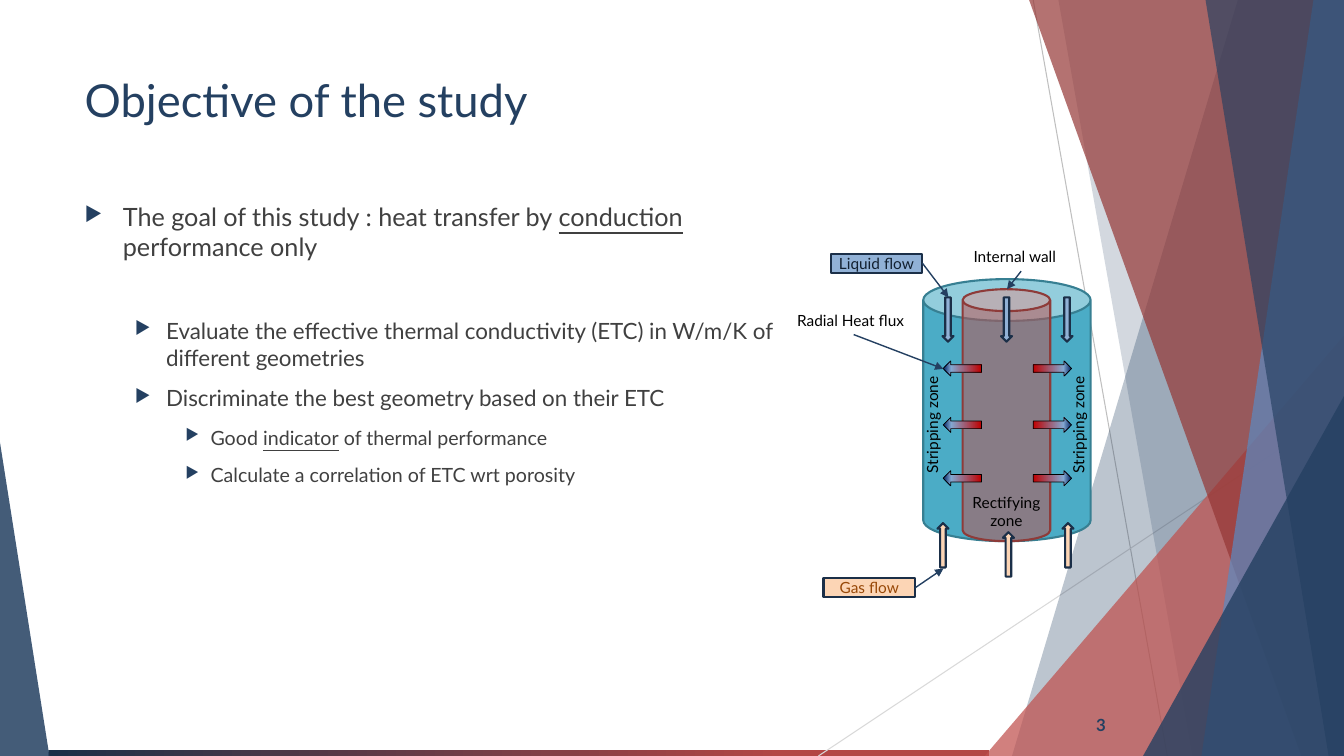
from lxml.etree import SubElement
from pptx import Presentation
from pptx.dml.color import RGBColor
from pptx.enum.shapes import MSO_CONNECTOR, MSO_SHAPE
from pptx.enum.text import MSO_ANCHOR, MSO_AUTO_SIZE, PP_ALIGN
from pptx.oxml.ns import qn
from pptx.util import Pt

WIDE, HIGH = 960, 540
NAVY = RGBColor(0x24, 0x40, 0x61)
DEEP = RGBColor(0x1B, 0x30, 0x49)
EDGE = RGBColor(0x1B, 0x2F, 0x48)
RED = RGBColor(0xC0, 0x50, 0x4D)
BRICK = RGBColor(0xB3, 0x46, 0x44)
RUST = RGBColor(0x95, 0x37, 0x35)
WINE = RGBColor(0x8E, 0x3B, 0x39)
BLUE = RGBColor(0x5A, 0x8A, 0xC2)
SKY = RGBColor(0x91, 0xB1, 0xD6)
PEACH = RGBColor(0xFC, 0xD5, 0xB5)
AQUA = RGBColor(0x4B, 0xAC, 0xC6)
TEAL = RGBColor(0x37, 0x7F, 0x92)
COLD = RGBColor(0x00, 0x20, 0x60)
MILD = RGBColor(0x83, 0xA7, 0xD1)
HOT = RGBColor(0xC0, 0x00, 0x00)
INK = RGBColor(0x12, 0x20, 0x30)
BROWN = RGBColor(0x98, 0x48, 0x07)
GREY = RGBColor(0x40, 0x40, 0x40)
MIST = RGBColor(0xBF, 0xBF, 0xBF)
PALE = RGBColor(0xD9, 0xD9, 0xD9)
BLACK = RGBColor(0, 0, 0)


class Deck:
    FACE = "Lato"
    # Left margin and hanging indent of each bullet level, text size
    LEVELS = [(27.4, 27.4, 18), (58.3, 22.3, 16), (90, 18, 14)]

    def __init__(self, slide):
        self.slide = slide
        self.shapes = slide.shapes

    def style(self, font, size, color, bold=False):
        font.name, font.size, font.bold = self.FACE, Pt(size), bold
        font.color.rgb = color

    def paint(self, shape, fill, alpha=100, line=None, width=1.5):
        shape.shadow.inherit = False
        shape.fill.solid()
        shape.fill.fore_color.rgb = fill
        if alpha < 100:
            tint = shape.element.spPr.find(qn("a:solidFill"))[0]
            SubElement(tint, qn("a:alpha"), val=str(alpha * 1000))
        if line is None:
            shape.line.fill.background()
        else:
            shape.line.color.rgb = line
            shape.line.width = Pt(width)
        return shape

    def form(self, kind, box, fill, alpha=100, line=None, width=1.5, flip=None):
        shape = self.shapes.add_shape(kind, *map(Pt, box))
        if flip:
            shape.element.spPr.xfrm.set(flip, "1")
        return self.paint(shape, fill, alpha, line, width)

    def blend(self, shape, stops, angle):
        shape.fill.gradient()
        shape.fill.gradient_angle = angle
        items = shape.element.spPr.find(qn("a:gradFill")).find(qn("a:gsLst"))
        for item in list(items):
            items.remove(item)
        for place, color in stops:
            stop = SubElement(items, qn("a:gs"), pos=str(place * 1000))
            SubElement(stop, qn("a:srgbClr"), val=str(color))

    def wedge(self, box, tip, fill, alpha):
        shape = self.form(MSO_SHAPE.ISOSCELES_TRIANGLE, box, fill, alpha)
        shape.adjustments[0] = tip

    def wing(self, top, foot, fill, alpha):
        shape = self.shapes.build_freeform(Pt(top), 0, scale=1.0)
        rest = [(WIDE, 0), (WIDE, HIGH), (foot, HIGH)]
        shape.add_line_segments([(Pt(x), Pt(y)) for x, y in rest], close=True)
        self.paint(shape.convert_to_shape(), fill, alpha)

    def link(self, ends, color=NAVY, width=1, head=True):
        line = self.shapes.add_connector(MSO_CONNECTOR.STRAIGHT, *map(Pt, ends))
        line.line.color.rgb = color
        line.line.width = Pt(width)
        props = line.element.spPr
        if head:
            SubElement(props.find(qn("a:ln")), qn("a:tailEnd"), type="triangle")
        SubElement(props, qn("a:effectLst"))

    def words(self, shape, text, size, color, align, bold=False):
        shape.text_frame.text = text
        shape.text_frame.word_wrap = True
        para = shape.text_frame.paragraphs[0]
        para.alignment = align
        self.style(para.runs[0].font, size, color, bold)

    def note(self, box, text, align=PP_ALIGN.CENTER, turn=0):
        shape = self.shapes.add_textbox(*map(Pt, box))
        shape.rotation = turn
        self.words(shape, text, 11, BLACK, align)

    def label(self, box, text, fill, color):
        shape = self.form(MSO_SHAPE.RECTANGLE, box, fill, line=EDGE)
        frame = shape.text_frame
        frame.margin_left = frame.margin_right = 0
        frame.margin_top = frame.margin_bottom = 0
        frame.vertical_anchor = MSO_ANCHOR.MIDDLE
        self.words(shape, text, 11, color, PP_ALIGN.CENTER)

    def title(self, box, text):
        shape = self.shapes.title
        shape.left, shape.top, shape.width, shape.height = map(Pt, box)
        self.words(shape, text, 32.4, NAVY, PP_ALIGN.LEFT)
        shape.text_frame.vertical_anchor = MSO_ANCHOR.TOP
        shape.text_frame.auto_size = MSO_AUTO_SIZE.NONE

    def bullets(self, box, items):
        """Words between underscores are underlined."""
        frame = self.shapes.add_textbox(*map(Pt, box)).text_frame
        frame.word_wrap = True
        for i, (level, gap, text) in enumerate(items):
            para = frame.add_paragraph() if i else frame.paragraphs[0]
            left, hang, size = self.LEVELS[level]
            para.level = level
            para.space_before = Pt(gap)
            props = para._p.get_or_add_pPr()
            props.set("marL", str(Pt(left)))
            props.set("indent", str(-Pt(hang)))
            tint = SubElement(props, qn("a:buClr"))
            SubElement(tint, qn("a:srgbClr"), val=str(NAVY))
            SubElement(props, qn("a:buSzPct"), val="80000")
            SubElement(props, qn("a:buChar"), char="▶")
            for j, part in enumerate(text.split("_")):
                run = para.add_run()
                run.text = part
                self.style(run.font, size, GREY)
                run.font.underline = j % 2 == 1

    def number(self, box, text):
        shape = self.shapes.add_textbox(*map(Pt, box))
        shape.text_frame.vertical_anchor = MSO_ANCHOR.MIDDLE
        self.words(shape, text, 12, NAVY, PP_ALIGN.RIGHT, bold=True)


def main():
    show = Presentation()
    show.slide_width, show.slide_height = Pt(WIDE), Pt(HIGH)
    deck = Deck(show.slides.add_slide(show.slide_layouts[5]))

    # Backdrop
    bar = deck.form(MSO_SHAPE.RECTANGLE, (34.6, 535.7, 671.8, 4.3), DEEP)
    deck.blend(bar, [(0, DEEP), (78, BRICK)], 0)
    deck.link((738, 0, 833.8, HIGH), MIST, 0.75, head=False)
    deck.link((WIDE, 290.2, 584.6, HIGH), PALE, 0.75, head=False)
    deck.wing(884.2, 722.9, NAVY, 30)
    deck.wing(756, 851.8, NAVY, 20)
    deck.wedge((703.4, 239.8, 256.6, 300.2), 1, RED, 72)
    deck.wing(735.1, 929.5, RUST, 70)
    deck.wing(938.2, 858.2, BLUE, 70)
    deck.wing(861.1, 949, NAVY, 65)
    deck.wedge((816.5, 283, 143.5, 257), 1, NAVY, 80)
    deck.wedge((0, 316.1, 35.3, 223.9), 0, NAVY, 85)

    # Title and text
    deck.title((53.3, 48.2, 676.8, 50.4), "Objective of the study")
    deck.bullets((53.3, 140.4, 511.9, 363), [
        (0, 0, "The goal of this study : heat transfer by _conduction_ performance only"),
        (1, 39.2, "Evaluate the effective thermal conductivity (ETC) in W/m/K of different geometries"),
        (1, 10, "Discriminate the best geometry based on their ETC"),
        (2, 10, "Good _indicator_ of thermal performance"),
        (2, 10, "Calculate a correlation of ETC wrt porosity"),
    ])
    deck.number((743, 503.3, 54, 28.8), "3")

    # Column with its inner wall
    deck.form(MSO_SHAPE.CAN, (659.5, 199.4, 119.5, 187.2), AQUA, line=TEAL)
    deck.form(MSO_SHAPE.CAN, (687.6, 206.6, 62.6, 180), RED, 52, WINE)

    # Radial heat arrows
    heat = [(0, COLD), (21, MILD), (100, HOT)]
    for x, flip in ((738, None), (673.7, "flipH")):
        for y in (257.8, 298.1, 336.2):
            arrow = deck.form(MSO_SHAPE.RIGHT_ARROW, (x, y, 27.4, 10.8), HOT,
                              line=BLACK, width=0.5, flip=flip)
            deck.blend(arrow, heat, 180)

    # Names of the parts
    deck.note((562.3, 218.9, 94.3, 20.9), "Radial Heat flux", PP_ALIGN.LEFT)
    deck.link((609.8, 239, 673.9, 263.5))
    deck.note((688.3, 172.8, 82.1, 20.9), "Internal wall", PP_ALIGN.LEFT)
    deck.link((729.4, 193.7, 719.3, 206.6))
    deck.note((681.1, 348.5, 75.6, 33.8), "Rectifying zone")
    for x in (609.1, 713.5):
        deck.note((x, 293, 113.8, 20.9), "Stripping zone", turn=270)

    # Liquid goes down, gas goes up
    for x in (673.2, 715, 758.2):
        deck.form(MSO_SHAPE.DOWN_ARROW, (x, 212.4, 7.9, 31.7), SKY, line=EDGE)
    for x, y in ((758.9, 373.7), (716.4, 380.2), (669.6, 373.7)):
        deck.form(MSO_SHAPE.DOWN_ARROW, (x, y, 7.9, 31.7), PEACH, line=EDGE,
                  flip="flipV")
    deck.label((593.3, 181.4, 65.5, 13.7), "Liquid flow", SKY, INK)
    deck.link((658.8, 187.9, 677.5, 212.4))
    deck.label((588.2, 412.6, 65.5, 13.7), "Gas flow", PEACH, BROWN)
    deck.link((653.8, 419.8, 673.9, 406.1))

    show.save("out.pptx")


if __name__ == "__main__":
    main()
